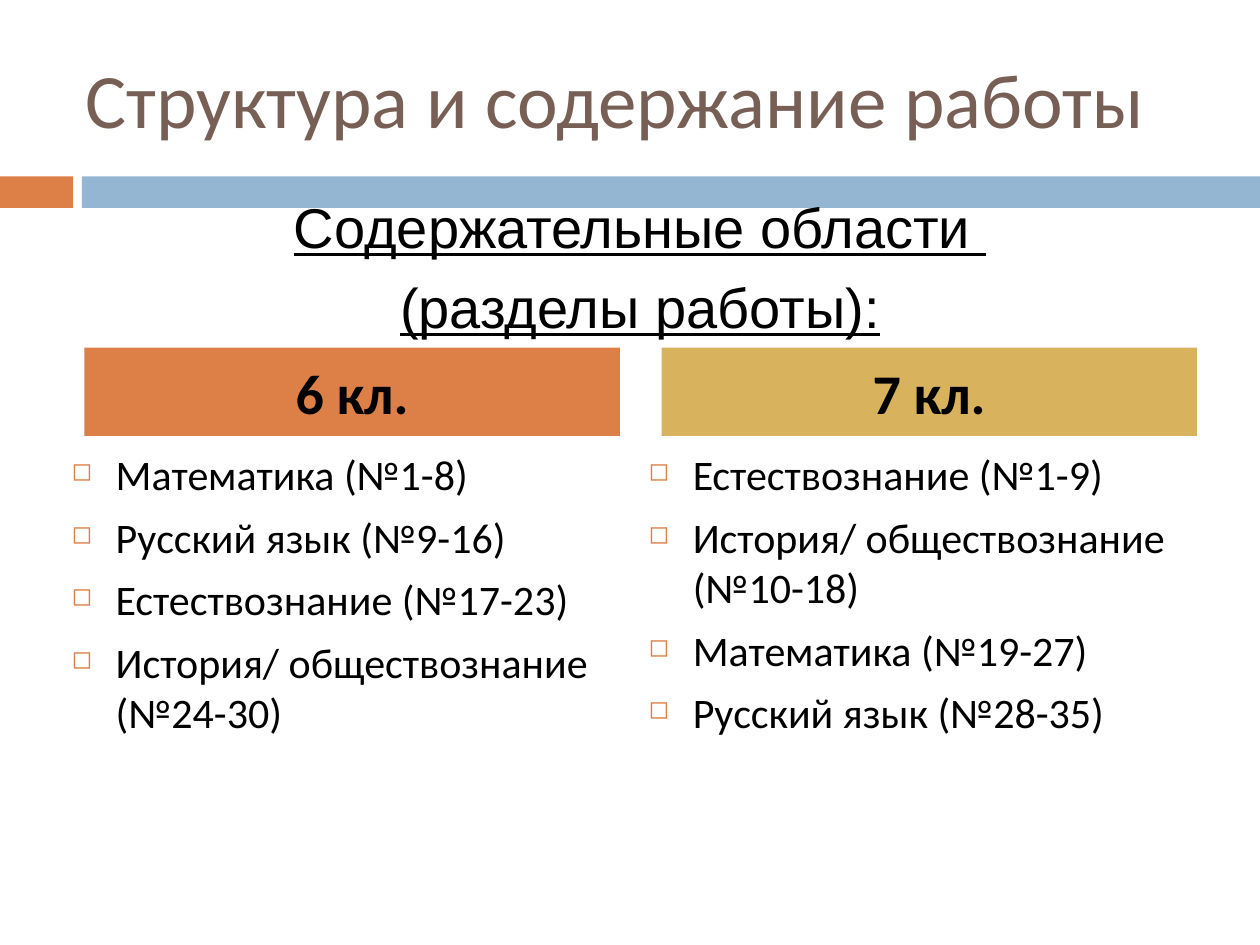
"""Builds the slide on the structure and content of the test for two grades."""
import pptx
import pptx.dml.color
import pptx.enum.shapes
import pptx.enum.text
import pptx.oxml
import pptx.oxml.ns
import pptx.util

Inches, Pt = pptx.util.Inches, pptx.util.Pt
ALIGN, ANCHOR = pptx.enum.text.PP_ALIGN, pptx.enum.text.MSO_ANCHOR

TITLE = "Структура и содержание работы"
HEADING = ["Содержательные области ", "(разделы работы):"]
GRADES = [
    ("6 кл.", "DD8047", ["Математика (№1-8)", "Русский язык (№9-16)",
                         "Естествознание (№17-23)", "История/ обществознание (№24-30)"]),
    ("7 кл.", "D8B25C", ["Естествознание (№1-9)", "История/ обществознание (№10-18)",
                         "Математика (№19-27)", "Русский язык (№28-35)"]),
]
BANDS = [(0, 0.58, "DD8047"), (0.65, 9.35, "94B6D2")]
BULLET = "DD8047"
COLUMN_STEP = 4.58


def rgb(color):
    return pptx.dml.color.RGBColor.from_string(color)


def add_rect(s, left, top, width, height, color):
    sp = s.shapes.add_shape(pptx.enum.shapes.MSO_SHAPE.RECTANGLE,
                            Inches(left), Inches(top), Inches(width), Inches(height))
    sp.shadow.inherit = False
    sp.fill.solid()
    sp.fill.fore_color.rgb = rgb(color)
    sp.line.fill.background()
    return sp


def add_box(s, left, top, width, height):
    return s.shapes.add_textbox(Inches(left), Inches(top), Inches(width), Inches(height))


def write(sp, lines, size, color="000000", font="Calibri", align=ALIGN.LEFT,
          anchor=ANCHOR.TOP, before=7, bold=False, underline=False):
    tf = sp.text_frame
    tf.text = "\n".join(lines)
    tf.word_wrap = True
    tf.auto_size = pptx.enum.text.MSO_AUTO_SIZE.NONE
    tf.vertical_anchor = anchor
    for p in tf.paragraphs:
        p.alignment = align
        p.space_before = Pt(before)
        for r in p.runs:
            r.font.name, r.font.size = font, Pt(size)
            r.font.bold, r.font.underline = bold, underline
            r.font.color.rgb = rgb(color)


def add_bullets(sp):
    ns = pptx.oxml.ns.nsdecls("a")
    for p in sp.text_frame.paragraphs:
        pPr = p._p.get_or_add_pPr()
        pPr.set("marL", str(Inches(0.35)))
        pPr.set("indent", str(Inches(-0.35)))
        for xml in (f'<a:buClr {ns}><a:srgbClr val="{BULLET}"/></a:buClr>',
                    f'<a:buSzPct {ns} val="60000"/>',
                    f'<a:buChar {ns} char="◻"/>'):
            pPr.append(pptx.oxml.parse_xml(xml))


def main():
    prs = pptx.Presentation()
    prs.slide_width, prs.slide_height = Inches(10), Inches(7.5)
    s = prs.slides.add_slide(prs.slide_layouts[5])

    for left, width, color in BANDS:
        add_rect(s, left, 1.4, width, 0.25, color)

    title = s.shapes.title
    title.left, title.top = Inches(0.58), Inches(0.3)
    title.width, title.height = Inches(8.92), Inches(0.95)
    write(title, [TITLE], 44, "775F55", anchor=ANCHOR.MIDDLE, before=0)

    for i, (grade, color, topics) in enumerate(GRADES):
        shift = i * COLUMN_STEP
        body = add_box(s, 0.47 + shift, 3.51, 4.49, 3.92)
        write(body, topics, 24)
        add_bullets(body)
        header = add_rect(s, 0.67 + shift, 2.76, 4.25, 0.7, color)
        write(header, [grade], 32, align=ALIGN.CENTER, anchor=ANCHOR.MIDDLE, bold=True)

    heading = add_box(s, 0.47, 1.48, 9.22, 1.28)
    write(heading, HEADING, 32, font="Arial", align=ALIGN.CENTER, underline=True)

    prs.save("out.pptx")


if __name__ == "__main__":
    main()
